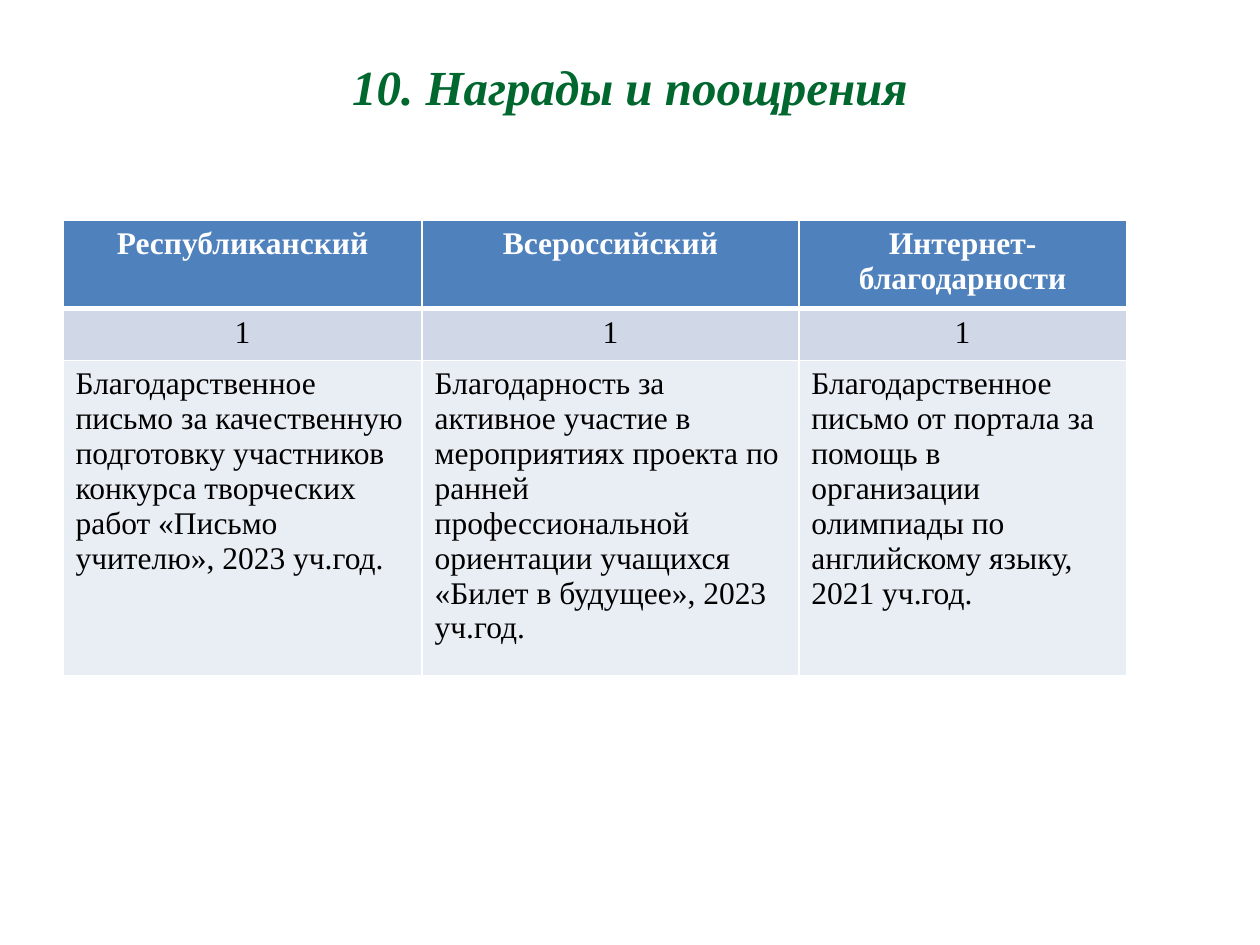
from dataclasses import dataclass

from lxml import etree
from pptx import Presentation
from pptx.dml.color import RGBColor
from pptx.enum.text import MSO_ANCHOR, PP_ALIGN
from pptx.oxml.ns import qn
from pptx.util import Inches, Pt

CENTER = PP_ALIGN.CENTER
LEFT = PP_ALIGN.LEFT
MIDDLE = MSO_ANCHOR.MIDDLE

WHITE = RGBColor(0xFF, 0xFF, 0xFF)
BLACK = RGBColor(0x00, 0x00, 0x00)
GREEN = RGBColor(0x00, 0x68, 0x2F)
BLUE = RGBColor(0x4F, 0x81, 0xBD)
BLUE_LIGHT = RGBColor(0xD0, 0xD8, 0xE8)
BLUE_PALE = RGBColor(0xE9, 0xED, 0xF4)

FONT = "Times New Roman"
COLUMN_WIDTHS = (2.85, 2.99, 2.6)
ROW_HEIGHT = 0.41  # minimum height, rows grow with their text


@dataclass(frozen=True)
class AwardRow:
    texts: tuple[str, ...]
    fill: RGBColor
    color: RGBColor = BLACK
    bold: bool = False
    alignment: PP_ALIGN = CENTER
    top_border: float = 1
    bottom_border: float = 1


AWARD_ROWS = (
    AwardRow(("Республиканский", "Всероссийский", "Интернет-благодарности"),
             BLUE, color=WHITE, bold=True, bottom_border=3),
    AwardRow(("1", "1", "1"), BLUE_LIGHT, top_border=3),
    AwardRow((
        "Благодарственное письмо за качественную подготовку участников "
        "конкурса творческих работ «Письмо учителю», 2023 уч.год.",
        "Благодарность за активное участие в мероприятиях проекта по ранней "
        "профессиональной ориентации учащихся «Билет в будущее», 2023 уч.год.",
        "Благодарственное письмо от портала за помощь в организации "
        "олимпиады по английскому языку, 2021 уч.год.",
    ), BLUE_PALE, alignment=LEFT),
)


def format_text(paragraph, size: float, color: RGBColor, bold: bool,
                alignment: PP_ALIGN, italic: bool = False) -> None:
    paragraph.alignment = alignment
    for run in paragraph.runs:
        run.font.name = FONT
        run.font.size = Pt(size)
        run.font.bold = bold
        run.font.italic = italic
        run.font.color.rgb = color


def add_title(slide, text: str) -> None:
    title = slide.shapes.add_textbox(Inches(0.5), Inches(0.3), Inches(9), Inches(0.77))
    text_frame = title.text_frame
    text_frame.word_wrap = True
    text_frame.vertical_anchor = MIDDLE
    text_frame.text = text
    format_text(text_frame.paragraphs[0], 28, GREEN, True, CENTER, italic=True)


def set_borders(cell, row: AwardRow) -> None:
    properties = cell._tc.get_or_add_tcPr()
    widths = {"a:lnL": 1, "a:lnR": 1, "a:lnT": row.top_border, "a:lnB": row.bottom_border}
    # Border lines come before the fill in the cell properties
    for position, (tag, width) in enumerate(widths.items()):
        line = etree.Element(qn(tag), w=str(Pt(width)))
        fill = etree.SubElement(line, qn("a:solidFill"))
        etree.SubElement(fill, qn("a:srgbClr"), val=str(WHITE))
        properties.insert(position, line)


def fill_cell(cell, text: str, row: AwardRow) -> None:
    cell.fill.solid()
    cell.fill.fore_color.rgb = row.fill
    set_borders(cell, row)
    cell.text_frame.text = text
    format_text(cell.text_frame.paragraphs[0], 18, row.color, row.bold, row.alignment)


def add_awards_table(slide, rows: tuple[AwardRow, ...]) -> None:
    table = slide.shapes.add_table(
        len(rows), len(COLUMN_WIDTHS), Inches(0.5), Inches(1.75),
        Inches(sum(COLUMN_WIDTHS)), Inches(ROW_HEIGHT * len(rows))).table
    for column, width in zip(table.columns, COLUMN_WIDTHS):
        column.width = Inches(width)
    for table_row, row in zip(table.rows, rows):
        for cell, text in zip(table_row.cells, row.texts):
            fill_cell(cell, text, row)


def main() -> None:
    presentation = Presentation()
    presentation.slide_width = Inches(10)
    presentation.slide_height = Inches(7.5)
    slide = presentation.slides.add_slide(presentation.slide_layouts[6])

    # Heading
    add_title(slide, "10. Награды и поощрения")
    # Awards by level
    add_awards_table(slide, AWARD_ROWS)

    presentation.save("out.pptx")


if __name__ == "__main__":
    main()
